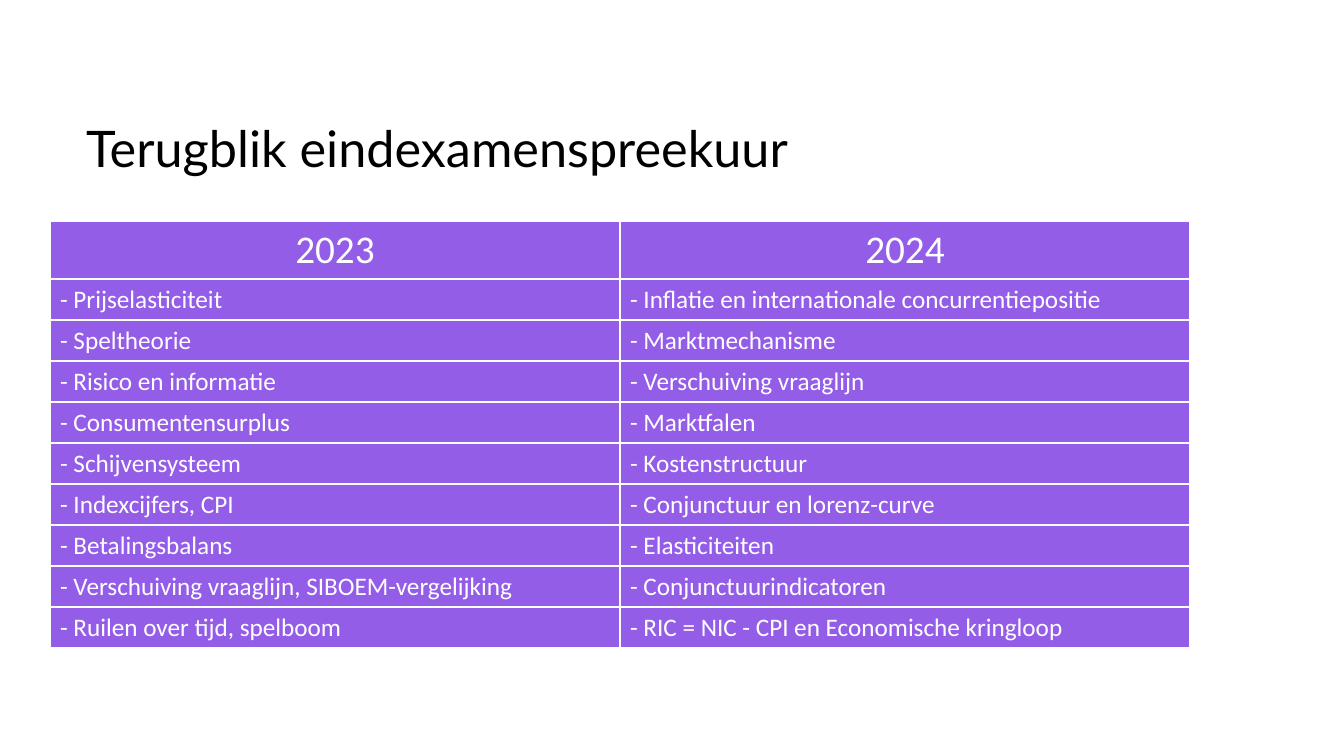
import pptx
import pptx.dml.color
import pptx.enum.text
import pptx.oxml.ns
import pptx.util
from lxml import etree

RGB = pptx.dml.color.RGBColor
ALIGN = pptx.enum.text.PP_ALIGN
ANCHOR = pptx.enum.text.MSO_ANCHOR

BLACK = RGB(0x00, 0x00, 0x00)
WHITE = RGB(0xFF, 0xFF, 0xFF)
PURPLE = RGB(0x94, 0x5D, 0xE8)

HEAD_H, ROW_H = 56, 41
YEARS = ("2023", "2024")
TOPICS = (
    ("Prijselasticiteit", "Inflatie en internationale concurrentiepositie"),
    ("Speltheorie", "Marktmechanisme"),
    ("Risico en informatie", "Verschuiving vraaglijn"),
    ("Consumentensurplus", "Marktfalen"),
    ("Schijvensysteem", "Kostenstructuur"),
    ("Indexcijfers, CPI", "Conjunctuur en lorenz-curve"),
    ("Betalingsbalans", "Elasticiteiten"),
    ("Verschuiving vraaglijn, SIBOEM-vergelijking", "Conjunctuurindicatoren"),
    ("Ruilen over tijd, spelboom", "RIC = NIC - CPI en Economische kringloop"),
)


def px(n):
    return pptx.util.Emu(round(n * 914400 / 100.8))


def write(frame, text, size, font="Calibri", color=WHITE, align=ALIGN.LEFT):
    para = frame.paragraphs[0]
    para.alignment = align
    run = para.add_run()
    run.text = text
    run.font.name = font
    run.font.size = pptx.util.Pt(size)
    run.font.bold = False
    run.font.color.rgb = color


def edge(cell, color=WHITE, width=1):
    """Draw a solid line on all four sides of a cell."""
    qn = pptx.oxml.ns.qn
    props = cell._tc.get_or_add_tcPr()
    for side in ("lnL", "lnR", "lnT", "lnB"):
        line = etree.SubElement(props, qn("a:" + side), w=str(pptx.util.Pt(width)))
        fill = etree.SubElement(line, qn("a:solidFill"))
        etree.SubElement(fill, qn("a:srgbClr"), val=str(color))


def add_title(slide, left, top, width, height):
    title = slide.shapes.title
    title.left, title.top = px(left), px(top)
    title.width, title.height = px(width), px(height)
    frame = title.text_frame
    frame.word_wrap = True
    frame.auto_size = pptx.enum.text.MSO_AUTO_SIZE.NONE
    frame.vertical_anchor = ANCHOR.TOP
    write(frame, "Terugblik eindexamenspreekuur", 36, font="Lato", color=BLACK)
    frame.paragraphs[0].line_spacing = 1.0


def add_topics(slide, left, top, width):
    rows = [YEARS] + [[f"- {topic}" for topic in pair] for pair in TOPICS]
    height = HEAD_H + ROW_H * len(TOPICS)
    table = slide.shapes.add_table(
        len(rows), len(YEARS), px(left), px(top), px(width), px(height)
    ).table
    table.first_row = table.horz_banding = False
    for col in table.columns:
        col.width = px(width / len(YEARS))
    for r, texts in enumerate(rows):
        head = r == 0
        table.rows[r].height = px(HEAD_H if head else ROW_H)
        for c, text in enumerate(texts):
            cell = table.cell(r, c)
            edge(cell)
            cell.fill.solid()
            cell.fill.fore_color.rgb = PURPLE
            write(cell.text_frame, text, 28 if head else 18,
                  align=ALIGN.CENTER if head else ALIGN.LEFT)


def main():
    deck = pptx.Presentation()
    deck.slide_width, deck.slide_height = px(1344), px(756)
    slide = deck.slides.add_slide(deck.slide_layouts[5])
    add_title(slide, 76, 112, 1063, 132)
    add_topics(slide, 50, 221, 1140)
    deck.save("out.pptx")


if __name__ == "__main__":
    main()
